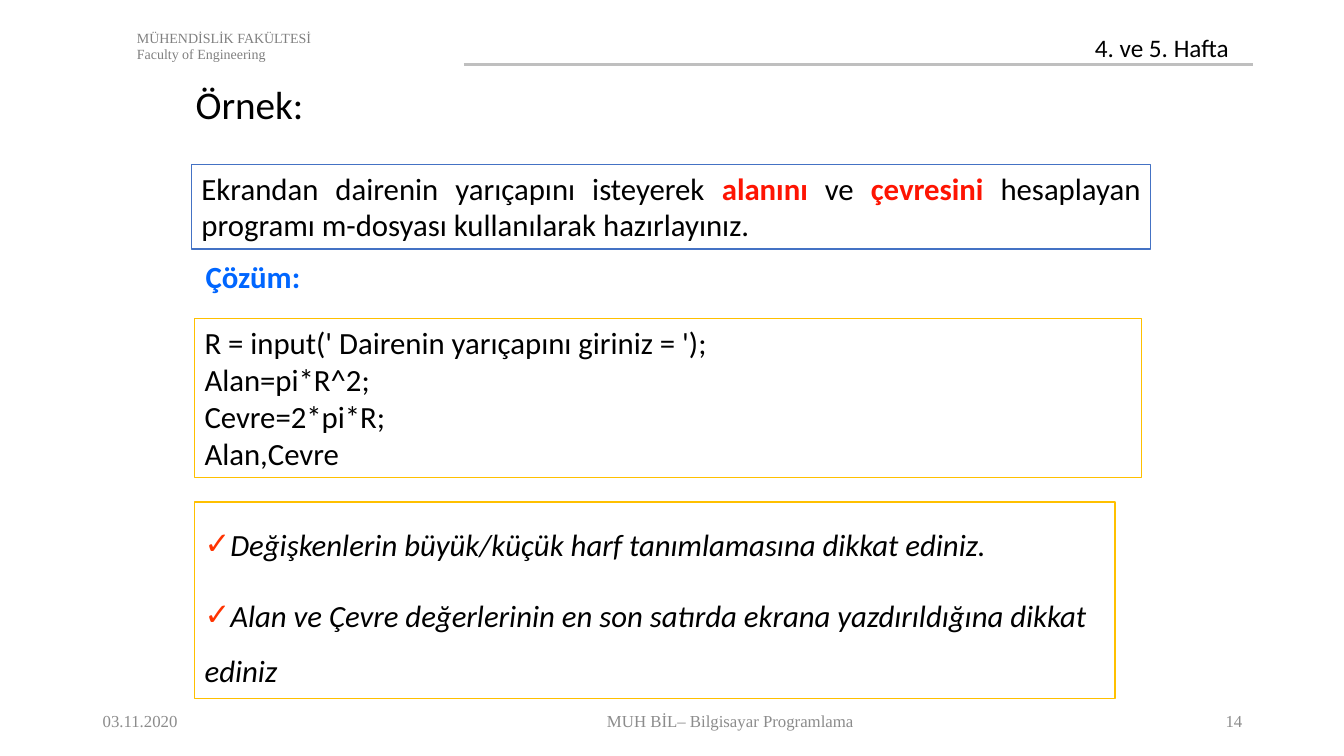
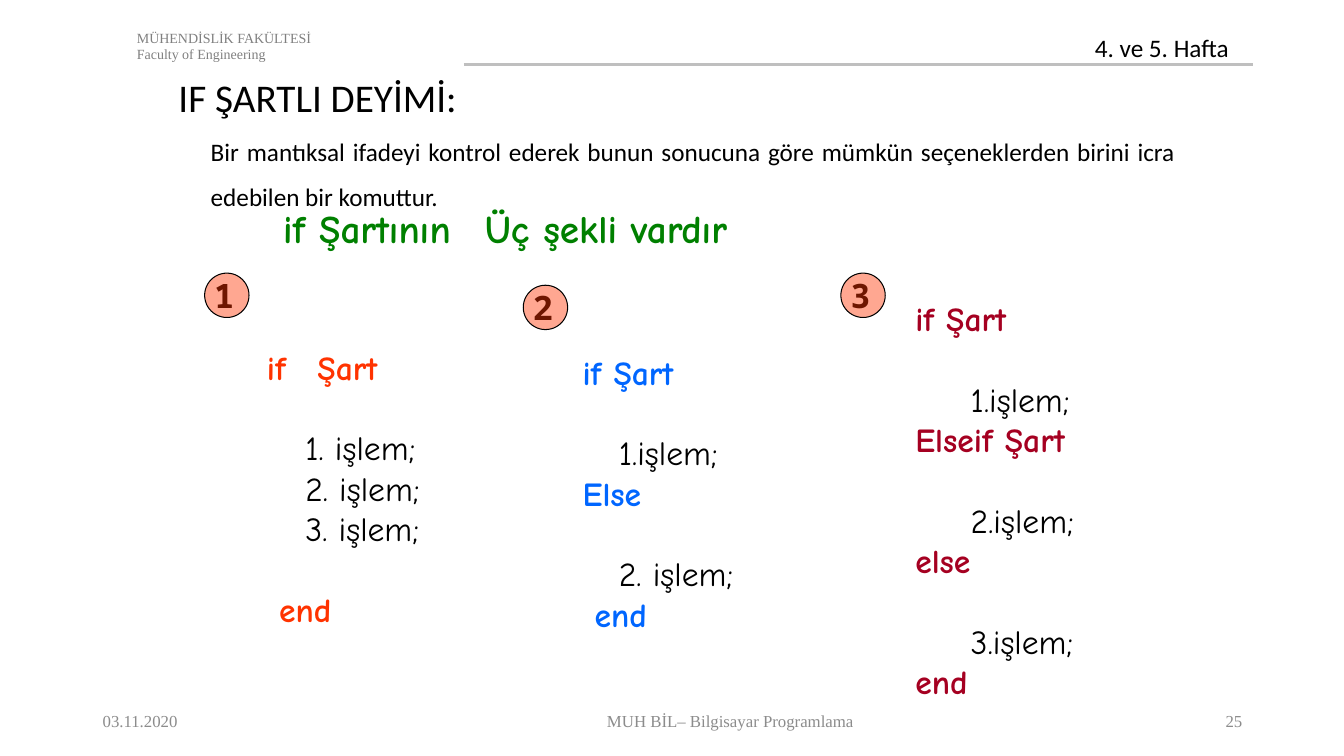
from pptx import Presentation
from pptx.dml import color
from pptx.enum import shapes, text
from pptx.oxml import ns
from pptx.util import Inches, Pt
from lxml import etree

ALIGN = {"l": text.PP_ALIGN.LEFT, "c": text.PP_ALIGN.CENTER,
         "r": text.PP_ALIGN.RIGHT, "j": text.PP_ALIGN.JUSTIFY}
COMIC, SERIF = "Comic Neue", "Times New Roman"
BLACK, WHITE, GREY, PALE, RULE = "000000", "FFFFFF", "808080", "8C8C8C", "BFBFBF"
RED, BLUE, GREEN, WINE = "FF3300", "0066FF", "008000", "A50021"
BRIGHT, GOLD, NAVY, BROWN = "FE1402", "FFC000", "4472C4", "6E1600"


def rgb(code):
    return color.RGBColor.from_string(code)


def node(parent, tag, **attrs):
    return etree.SubElement(parent, ns.qn(tag), attrs)


def write(frame, words, size=22, font="Calibri", ink=BLACK, bold=False,
          italic=False, align="l", lead=1, gap=0, inset=0, mark=None, tab=None):
    para = frame.paragraphs[0]
    if para.runs:
        para = frame.add_paragraph()
    para.alignment = ALIGN[align]
    para.line_spacing = lead
    para.space_before = Pt(gap)
    para.space_after = Pt(0)
    props = para._p.get_or_add_pPr()
    props.set("marL", str(Inches(inset)))
    props.set("indent", "0")
    if mark:
        node(node(props, "a:buClr"), "a:srgbClr", val=RED)
        node(props, "a:buChar", char=mark)
    else:
        node(props, "a:buNone")
    if tab:
        node(node(props, "a:tabLst"), "a:tab", pos=str(Inches(tab)), algn="l")
    for part, tint in [(words, None)] if isinstance(words, str) else words:
        run = para.add_run()
        run.text = part
        run.font.size = Pt(size)
        run.font.name = font
        run.font.bold = bold or tint is not None
        run.font.italic = italic
        run.font.color.rgb = rgb(tint or ink)


class Deck:
    def __init__(self):
        self.prs = Presentation()
        self.prs.slide_width = Inches(13.33)
        self.prs.slide_height = Inches(7.5)
        self.slide = None

    def page(self, number, title, place):
        self.slide = self.prs.slides.add_slide(self.prs.slide_layouts[1])
        self.rule(4.6, 0.64, 12.43)
        head = self.box(1.26, 0.24, 6.67, 0.44)
        for line in ("MÜHENDİSLİK FAKÜLTESİ", "Faculty of Engineering"):
            write(head, line, size=10, font=SERIF, ink=GREY)
        write(self.box(10.76, 0.27, 1.65, 0.4), "4. ve 5. Hafta", size=18)
        for words, left, width, align in (
                ("03.11.2020", 0.92, 1.57, "l"),
                ("MUH BİL– Bilgisayar Programlama", 2.73, 9.03, "c"),
                (number, 11.97, 0.45, "r")):
            write(self.box(left, 6.95, width, 0.4, mid=True), words,
                  size=12, font=SERIF, ink=PALE, align=align)
        frame = self.place(self.slide.shapes.title, *place, mid=True, wrap=False)
        write(frame, title, size=28)

    def place(self, shape, left, top, width, height, mid=False, wrap=True):
        shape.left, shape.top = Inches(left), Inches(top)
        shape.width, shape.height = Inches(width), Inches(height)
        return self.frame(shape, mid, wrap)

    def frame(self, shape, mid=False, wrap=True):
        frame = shape.text_frame
        frame.auto_size = text.MSO_AUTO_SIZE.NONE
        frame.word_wrap = wrap
        anchor = text.MSO_ANCHOR
        frame.vertical_anchor = anchor.MIDDLE if mid else anchor.TOP
        return frame

    def box(self, left, top, width, height, mid=False, wrap=True):
        area = map(Inches, (left, top, width, height))
        return self.frame(self.slide.shapes.add_textbox(*area), mid, wrap)

    def body(self, *area):
        return self.place(self.slide.placeholders[1], *area)

    def paint(self, shape, fill, line, width):
        shape.fill.solid()
        shape.fill.fore_color.rgb = rgb(fill)
        shape.line.color.rgb = rgb(line)
        shape.line.width = Pt(width)

    def panel(self, line, *area):
        shape = self.slide.shapes.add_shape(
            shapes.MSO_SHAPE.RECTANGLE, *map(Inches, area))
        shape.shadow.inherit = False
        self.paint(shape, WHITE, line, 1)
        return self.frame(shape)

    def badge(self, label, left, top, side=0.44):
        shape = self.slide.shapes.add_shape(
            shapes.MSO_SHAPE.OVAL, *map(Inches, (left, top, side, side)))
        shape.shadow.inherit = False
        self.paint(shape, RED, BLACK, 0.75)
        tint = shape.fill._xPr.find(ns.qn("a:solidFill"))[0]
        node(tint, "a:alpha", val="43000")
        frame = self.frame(shape, mid=True, wrap=False)
        frame.margin_left = frame.margin_top = frame.margin_bottom = 0
        frame.margin_right = Inches(0.05)
        write(frame, label, size=24, font="Noto Sans Mono", ink=BROWN,
              bold=True, align="c")

    def rule(self, left, top, right):
        line = self.slide.shapes.add_connector(
            shapes.MSO_CONNECTOR.STRAIGHT,
            *map(Inches, (left, top, right, top)))
        line.line.color.rgb = rgb(RULE)
        line.line.width = Pt(1.5)
        node(line._element.spPr, "a:effectLst")

    def form(self, area, ink, step, end, lines, tab=None):
        frame = self.box(*area)
        after = None
        for line in lines:
            task = line.endswith(";")
            skip = after is not None and task != after and (task or end[1])
            inset = step if task else end[0] if line == "end" else 0
            write(frame, line, size=24, font=COMIC, bold=not task,
                  ink=BLACK if task else ink, inset=inset,
                  gap=28.8 if skip else 0, tab=tab if "\t" in line else None)
            after = task


def sample(deck):
    deck.page("14", "Örnek:", (1.84, 0.74, 1.31, 0.57))
    write(deck.panel(NAVY, 1.9, 1.63, 9.51, 0.84), [
        ("Ekrandan dairenin yarıçapını isteyerek ", None),
        ("alanını", BRIGHT), (" ve ", None), ("çevresini", BRIGHT),
        (" hesaplayan programı m-dosyası kullanılarak hazırlayınız.", None),
    ], align="j")
    write(deck.box(1.94, 2.51, 1.15, 0.47, mid=True, wrap=False),
          "Çözüm:", ink=BLUE, bold=True)
    code = deck.panel(GOLD, 1.93, 3.16, 9.39, 1.58)
    for line in ("R = input(' Dairenin yarıçapını giriniz = ');",
                 "Alan=pi*R^2;", "Cevre=2*pi*R;", "Alan,Cevre"):
        write(code, line)
    notes = deck.body(1.93, 4.98, 9.13, 1.95)
    deck.paint(deck.slide.placeholders[1], WHITE, GOLD, 1)
    for gap, line in (
            (0, "Değişkenlerin büyük/küçük harf tanımlamasına dikkat ediniz."),
            (11, "Alan ve Çevre değerlerinin en son satırda ekrana "
                 "yazdırıldığına dikkat ediniz")):
        write(notes, line, italic=True, lead=1.5, gap=gap, mark="✓")


def forms(deck):
    deck.page("25", "IF ŞARTLI DEYİMİ:", (1.67, 0.68, 3.52, 0.57))
    write(deck.body(1.99, 1.15, 9.77, 1.01),
          "Bir mantıksal ifadeyi kontrol ederek bunun sonucuna göre mümkün "
          "seçeneklerden birini icra edebilen bir komuttur.",
          size=18, align="j", lead=1.5)
    write(deck.box(2.71, 1.79, 5.71, 0.94, mid=True),
          "if Şartının\tÜç şekli vardır", size=28, font=COMIC, ink=GREEN,
          bold=True, tab=2.07)
    deck.form((2.55, 3.39, 2.13, 2.6), RED, 0.38, (0.12, True),
              ("if\tŞart", "1. işlem;", "2. işlem;", "3. işlem;", "end"),
              tab=0.43)
    deck.form((5.68, 3.44, 2.12, 2.93), BLUE, 0.36, (0.12, False),
              ("if Şart", "1.işlem;", "Else", "2. işlem;", "end"))
    deck.form((8.98, 2.91, 2.27, 4.14), WINE, 0.55, (0, False),
              ("if Şart", "1.işlem;", "Elseif Şart", "2.işlem;", "else",
               "3.işlem;", "end"))
    for label, left, top in (("1", 2.03, 2.71), ("2", 5.19, 2.83),
                             ("3", 8.34, 2.71)):
        deck.badge(label, left, top)


def main():
    deck = Deck()
    sample(deck)
    forms(deck)
    deck.prs.save("out.pptx")


if __name__ == "__main__":
    main()
